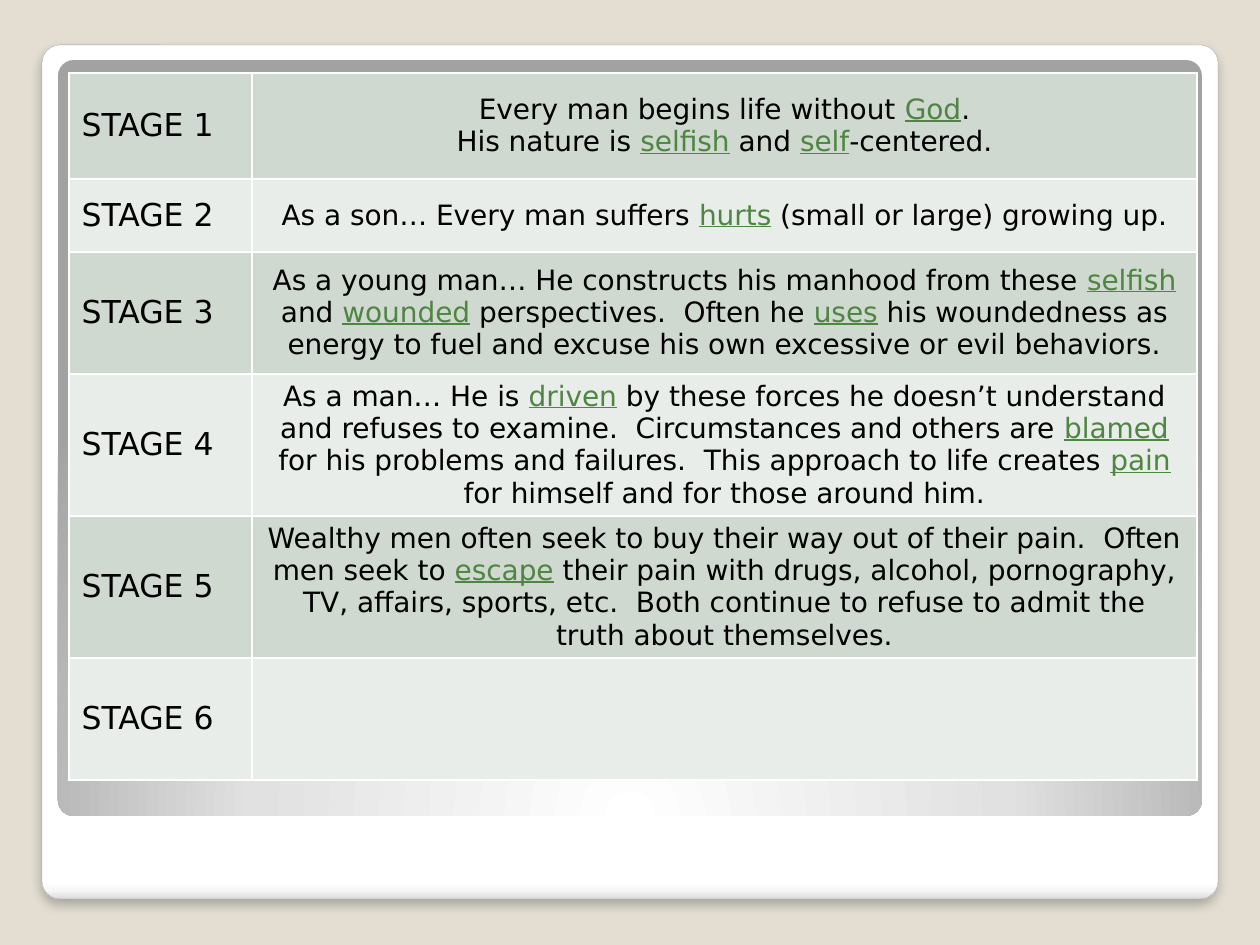
from lxml.etree import SubElement
from pptx import Presentation
from pptx.dml.color import RGBColor
from pptx.enum.shapes import MSO_SHAPE as Shape
from pptx.enum.text import MSO_ANCHOR as Anchor, PP_ALIGN as Align
from pptx.oxml import parse_xml
from pptx.oxml.ns import nsdecls, qn
from pptx.util import Pt

COLORS = {
    "page": "E3DED1", "edge": "A4A4A4", "white": "FFFFFF", "text": "000000",
    "key": "4E8542", "odd": "D0D9CF", "even": "E9EDE9",
}
FONT = "DejaVu Sans"
EMU_PER_PX = 914400 / 126
STAGES = [
    (106, ["Every man begins life without *God*.",
           "His nature is *selfish* and *self*-centered."]),
    (73, ["As a son… Every man suffers *hurts* (small or large) growing up."]),
    (122, ["As a young man… He constructs his manhood from these *selfish* and "
           "*wounded* perspectives.  Often he *uses* his woundedness as energy "
           "to fuel and excuse his own excessive or evil behaviors."]),
    (122, ["As a man… He is *driven* by these forces he doesn’t understand and "
           "refuses to examine.  Circumstances and others are *blamed* for his "
           "problems and failures.  This approach to life creates *pain* for "
           "himself and for those around him."]),
    (122, ["Wealthy men often seek to buy their way out of their pain.  Often men "
           "seek to *escape* their pain with drugs, alcohol, pornography, TV, "
           "affairs, sports, etc.  Both continue to refuse to admit the truth "
           "about themselves."]),
    (122, []),
]


def px(n):
    return round(n * EMU_PER_PX)


def rgb(name):
    return RGBColor.from_string(COLORS[name])


class Deck:
    def __init__(self, width, height):
        self.prs = Presentation()
        self.prs.slide_width, self.prs.slide_height = px(width), px(height)
        self.s = None

    def slide(self):
        self.s = self.prs.slides.add_slide(self.prs.slide_layouts[6])
        fill = self.s.background.fill
        fill.solid()
        fill.fore_color.rgb = rgb("page")

    def panel(self, box, stops, direction, line=None):
        sp = self.s.shapes.add_shape(Shape.ROUNDED_RECTANGLE, *map(px, box))
        sp.adjustments[0] = 0.021
        sp.shadow.inherit = False
        if line:
            sp.line.color.rgb = rgb(line)
            sp.line.width = Pt(0.16)
        else:
            sp.line.fill.background()
        gs = "".join(f'<a:gs pos="{pos * 1000}"><a:srgbClr val="{color}"/></a:gs>'
                     for pos, color in stops)
        grad = parse_xml(f'<a:gradFill {nsdecls("a")} rotWithShape="1">'
                         f"<a:gsLst>{gs}</a:gsLst>{direction}</a:gradFill>")
        sp._element.spPr.find(qn("a:prstGeom")).addnext(grad)
        return sp

    def shadow(self, sp):
        effects = sp._element.spPr.find(qn("a:effectLst"))
        effects.append(parse_xml(
            f'<a:outerShdw {nsdecls("a")} blurRad="{Pt(6)}" dist="{Pt(4)}" '
            'dir="5400000" algn="t" rotWithShape="0"><a:srgbClr val="000000">'
            '<a:alpha val="25000"/></a:srgbClr></a:outerShdw>'))

    def table(self, box, widths, heights):
        shape = self.s.shapes.add_table(len(heights), len(widths), *map(px, box))
        table = shape.table
        table.first_row = table.horz_banding = False
        for col, width in zip(table.columns, widths):
            col.width = px(width)
        for row, height in zip(table.rows, heights):
            row.height = px(height)
        return table

    def cell(self, cell, lines, size, align, fill):
        cell.vertical_anchor = Anchor.MIDDLE
        tc_pr = cell._tc.get_or_add_tcPr()
        for side in ("lnL", "lnR", "lnT", "lnB"):
            ln = SubElement(tc_pr, qn(f"a:{side}"), w=str(Pt(1)))
            SubElement(SubElement(ln, qn("a:solidFill")), qn("a:srgbClr"),
                       val=COLORS["white"])
        cell.fill.solid()
        cell.fill.fore_color.rgb = rgb(fill)
        tf = cell.text_frame
        for i, line in enumerate(lines):
            p = tf.add_paragraph() if i else tf.paragraphs[0]
            p.alignment = align
            for j, part in enumerate(line.split("*")):
                self.run(p, part, size, key=j % 2 == 1)

    def run(self, p, text, size, key):
        r = p.add_run()
        r.text = text
        r.font.name = FONT
        r.font.size = Pt(size)
        r.font.underline = key
        r.font.color.rgb = rgb("key" if key else "text")


def main():
    deck = Deck(1260, 945)
    deck.slide()
    card = deck.panel(
        (42, 45, 1176, 854),
        [(0, "FFFFFF"), (98, "FFFFFF"), (99, "F7F7F7"), (100, "DADADA")],
        '<a:lin ang="5400000" scaled="0"/>', "edge")
    deck.shadow(card)
    deck.panel(
        (58, 60, 1144, 756),
        [(0, "FFFFFF"), (55, "E1E1E1"), (100, "A2A2A2")],
        '<a:path path="circle"><a:fillToRect l="50000" t="175000" '
        'r="50000" b="-75000"/></a:path>')
    heights = [height for height, _ in STAGES]
    table = deck.table((69, 73, 1128, sum(heights)), (183, 945), heights)
    for i, (_, lines) in enumerate(STAGES):
        fill = "even" if i % 2 else "odd"
        deck.cell(table.cell(i, 0), [f"STAGE {i + 1}"], 18, Align.LEFT, fill)
        deck.cell(table.cell(i, 1), lines, 16, Align.CENTER, fill)
    deck.prs.save("out.pptx")


if __name__ == "__main__":
    main()
